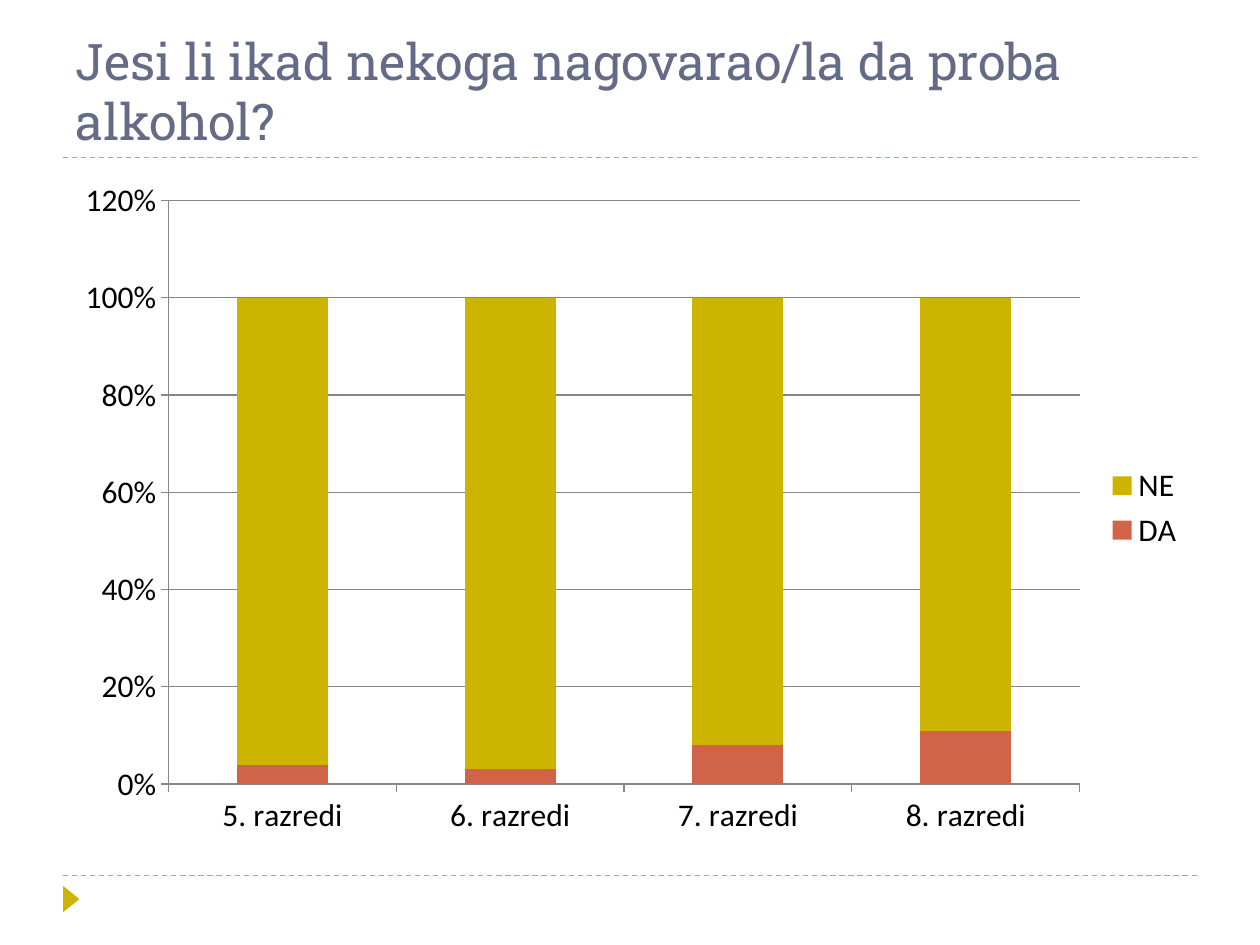
from lxml import etree
from pptx import Presentation
from pptx import util as u
from pptx.chart import data
from pptx.dml import color
from pptx.enum import chart as ch, dml, shapes, text
from pptx.oxml import ns

THEME = {
    "gold": color.RGBColor.from_string("CCB400"),
    "red": color.RGBColor.from_string("D16349"),
    "slate": color.RGBColor.from_string("646B86"),
    "black": color.RGBColor.from_string("000000"),
    "grey": color.RGBColor.from_string("868686"),
    "title_font": "Roboto Slab",
    "chart_font": "Calibri",
    "title_size": u.Pt(28.8),
    "chart_size": u.Pt(18),
}
LEFT, WIDTH = u.Cm(1.27), u.Cm(22.86)


def apply(obj, values):
    for name, value in values.items():
        setattr(obj, name, value)


prs = Presentation()
apply(prs, {"slide_width": u.Cm(25.4), "slide_height": u.Cm(19.05)})
s = prs.slides.add_slide(prs.slide_layouts[5])

for y in (u.Cm(17.65), u.Cm(3.18)):
    rule = s.shapes.add_connector(shapes.MSO_CONNECTOR.STRAIGHT, LEFT, y, LEFT + WIDTH, y)
    rule.line.color.rgb = THEME["gold"]
    apply(rule.line, {"width": u.Pt(0.75), "dash_style": dml.MSO_LINE.DASH})
    etree.SubElement(rule._element.spPr, ns.qn("a:effectLst"))

sp = s.shapes.add_shape(shapes.MSO_SHAPE.ISOSCELES_TRIANGLE,
                        u.Cm(1.17), u.Cm(17.96), u.Cm(0.53), u.Cm(0.33))
sp.rotation = 90
sp.shadow.inherit = False
sp.fill.solid()
sp.fill.fore_color.rgb = THEME["gold"]
sp.line.fill.background()

title = s.shapes.title
apply(title, {"left": LEFT, "top": u.Cm(0.43), "width": WIDTH, "height": u.Cm(2.74)})
tf = title.text_frame
apply(tf, {"vertical_anchor": text.MSO_ANCHOR.BOTTOM, "word_wrap": True,
           "auto_size": text.MSO_AUTO_SIZE.NONE})
p = tf.paragraphs[0]
p.alignment = text.PP_ALIGN.LEFT
r = p.add_run()
r.text = "Jesi li ikad nekoga nagovarao/la da proba alkohol?"
apply(r.font, {"name": THEME["title_font"], "size": THEME["title_size"]})
r.font.color.rgb = THEME["slate"]

answers = data.CategoryChartData(number_format="0%")
answers.categories = [f"{grade}. razredi" for grade in range(5, 9)]
answers.add_series("DA", (0.04, 0.03, 0.08, 0.11))
answers.add_series("NE", (0.96, 0.97, 0.92, 0.89))
chart = s.shapes.add_chart(ch.XL_CHART_TYPE.COLUMN_STACKED,
                           LEFT, u.Cm(3.38), WIDTH, u.Cm(13.72), answers).chart
apply(chart, {"has_title": False, "has_legend": True})
apply(chart.font, {"name": THEME["chart_font"], "size": THEME["chart_size"]})
chart.font.color.rgb = THEME["black"]
apply(chart.legend, {"position": ch.XL_LEGEND_POSITION.RIGHT, "include_in_layout": False})

plot = chart.plots[0]
apply(plot, {"gap_width": 150, "overlap": 100, "vary_by_categories": False})
for series, name in zip(plot.series, ("red", "gold")):
    series.format.fill.solid()
    series.format.fill.fore_color.rgb = THEME[name]

val, cat = chart.value_axis, chart.category_axis
apply(val, {"minimum_scale": 0, "maximum_scale": 1.2, "major_unit": 0.2,
            "has_major_gridlines": True})
apply(val.tick_labels, {"number_format": "0%", "number_format_is_linked": False})
for axis in (val, cat):
    axis.major_tick_mark = ch.XL_TICK_MARK.OUTSIDE
for part in (val, cat, val.major_gridlines):
    part.format.line.color.rgb = THEME["grey"]
    part.format.line.width = u.Pt(0.75)

prs.save("out.pptx")
